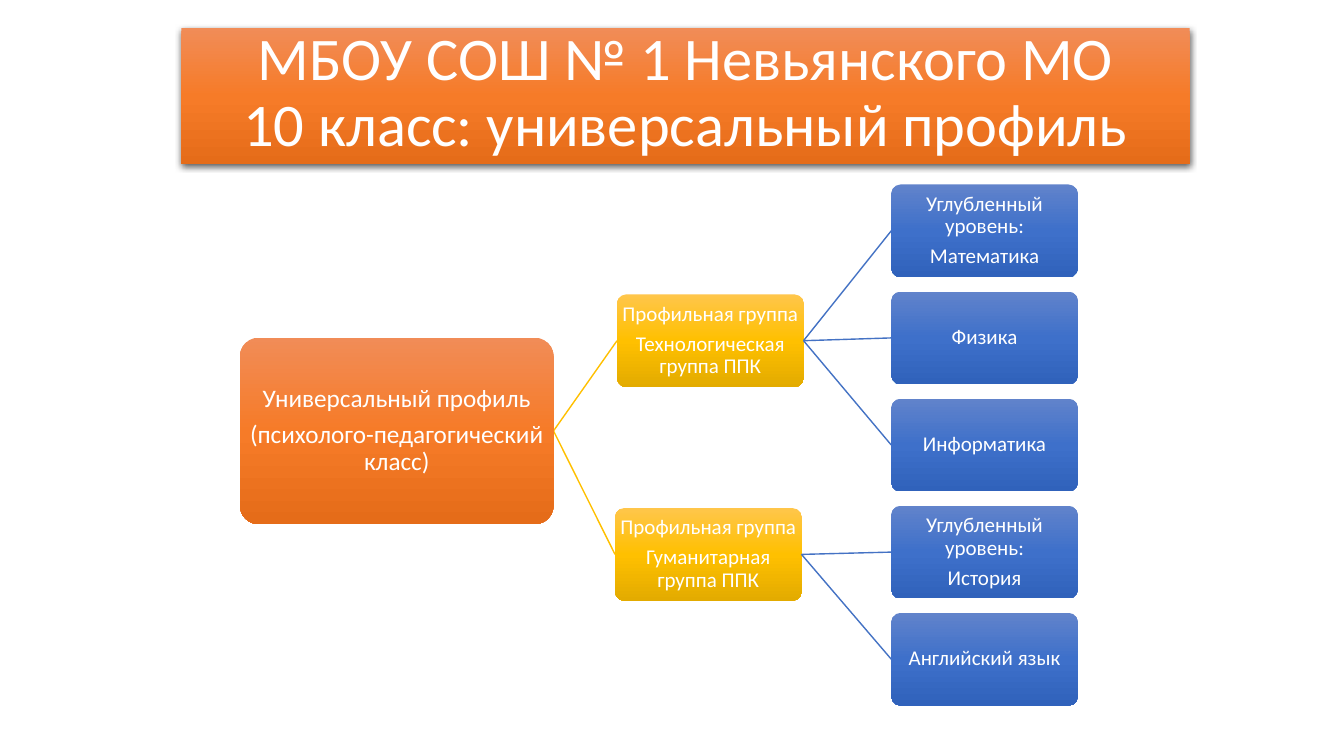
"""Build the slide with the tree of tenth-grade study profiles."""
from copy import deepcopy
from dataclasses import dataclass

from lxml.etree import SubElement
from pptx import Presentation
from pptx.dml.color import RGBColor
from pptx.enum.shapes import MSO_CONNECTOR as Connector, MSO_SHAPE as Preset
from pptx.enum.text import MSO_ANCHOR as Anchor, MSO_AUTO_SIZE as AutoSize, PP_ALIGN as Align
from pptx.oxml.ns import qn
from pptx.util import Inches, Pt

ORANGE = ("F18C57", "F67B28", "E56C19")
YELLOW = ("FFC64B", "FFC000", "E3AB00")
BLUE = ("6183CB", "3E70CA", "3062BB")
YELLOW_LINE, BLUE_LINE = "FFC000", "4472C4"
SUBJECT_LEFT, SUBJECT_TOP, SUBJECT_STEP = 8.84, 1.83, 1.0625


@dataclass(frozen=True)
class Node:
    """A box of the profile tree, measured in inches."""
    lines: tuple[str, ...]
    left: float
    top: float
    colors: tuple[str, str, str]
    width: float = 1.85
    height: float = 0.92
    size: float = 15

    @property
    def middle(self) -> float:
        return self.top + self.height / 2


def rgb(value: str) -> RGBColor:
    return RGBColor.from_string(value)


def fill_gradient(shape, colors: tuple[str, str, str]) -> None:
    shape.fill.gradient()
    shape.fill.gradient_angle = 270
    stop_list = shape._element.spPr.find(qn("a:gradFill")).find(qn("a:gsLst"))
    stop_list.insert(1, deepcopy(stop_list[0]))
    for stop, color, position in zip(shape.fill.gradient_stops, colors, (0, 0.5, 1)):
        stop.color.rgb = rgb(color)
        stop.position = position


def format_paragraph(paragraph, size: float, space_after: float = 0) -> None:
    layout = {"alignment": Align.CENTER, "line_spacing": 0.9,
              "space_before": Pt(0), "space_after": Pt(space_after)}
    for name, value in layout.items():
        setattr(paragraph, name, value)
    for name, value in {"name": "Calibri", "size": Pt(size), "bold": False}.items():
        setattr(paragraph.font, name, value)
    paragraph.font.color.rgb = rgb("FFFFFF")


def add_heading(slide, lines: tuple[str, str]) -> None:
    heading = slide.shapes.title
    place = {"left": 1.8, "top": 0.28, "width": 10, "height": 1.35}
    for name, value in place.items():
        setattr(heading, name, Inches(value))
    fill_gradient(heading, ORANGE)
    effects = SubElement(heading._element.spPr, qn("a:effectLst"))
    shadow = SubElement(effects, qn("a:outerShdw"), blurRad=str(Pt(4.5)),
                        dist=str(Pt(1.5)), dir="5400000", algn="ctr", rotWithShape="0")
    black = SubElement(shadow, qn("a:srgbClr"), val="000000")
    SubElement(black, qn("a:alpha"), val="63000")
    frame = heading.text_frame
    for name, value in {"vertical_anchor": Anchor.BOTTOM, "word_wrap": True,
                        "auto_size": AutoSize.NONE}.items():
        setattr(frame, name, value)
    school, grade = lines
    paragraph = frame.paragraphs[0]
    paragraph.add_run().text = school
    paragraph.add_line_break()
    paragraph.add_run().text = grade
    format_paragraph(paragraph, 43.2)


def add_node(slide, node: Node) -> None:
    box = slide.shapes.add_shape(
        Preset.ROUNDED_RECTANGLE,
        *map(Inches, (node.left, node.top, node.width, node.height)))
    box.adjustments[0] = 0.1
    box.shadow.inherit = False
    box.line.fill.background()
    fill_gradient(box, node.colors)
    frame = box.text_frame
    for side in ("left", "top", "right", "bottom"):
        setattr(frame, f"margin_{side}", Inches(0.01))
    frame.word_wrap = True
    frame.vertical_anchor = Anchor.MIDDLE
    frame.text = "\n".join(node.lines)
    for paragraph in frame.paragraphs:
        format_paragraph(paragraph, node.size, 0.35 * node.size)


def add_branch(slide, parent: Node, child: Node, color: str) -> None:
    ends = (parent.left + parent.width, parent.middle, child.left, child.middle)
    branch = slide.shapes.add_connector(Connector.STRAIGHT, *map(Inches, ends))
    branch.line.color.rgb = rgb(color)
    branch.line.width = Pt(1)
    SubElement(branch._element.spPr, qn("a:effectLst"))


def main() -> None:
    deck = Presentation()
    deck.slide_width, deck.slide_height = Inches(13.33), Inches(7.5)
    slide = deck.slides.add_slide(deck.slide_layouts[0])
    subtitle = slide.placeholders[1]._element
    subtitle.getparent().remove(subtitle)
    add_heading(slide, ("МБОУ СОШ № 1 Невьянского МО", "10 класс: универсальный профиль"))

    profile = Node(("Универсальный профиль", "(психолого-педагогический класс)"),
                   2.38, 3.35, ORANGE, 3.11, 1.85, 18)
    technology = Node(("Профильная группа", "Технологическая группа ППК"), 6.12, 2.92, YELLOW)
    humanities = Node(("Профильная группа", "Гуманитарная группа ППК"), 6.1, 5.04, YELLOW)
    advanced = "Углубленный уровень:"
    subjects = [
        (technology, (advanced, "Математика")),
        (technology, ("Физика",)),
        (technology, ("Информатика",)),
        (humanities, (advanced, "История")),
        (humanities, ("Английский язык",)),
    ]

    for group in (technology, humanities):
        add_branch(slide, profile, group, YELLOW_LINE)
        add_node(slide, group)
    add_node(slide, profile)
    for row, (group, lines) in enumerate(subjects):
        subject = Node(lines, SUBJECT_LEFT, SUBJECT_TOP + row * SUBJECT_STEP, BLUE)
        add_branch(slide, group, subject, BLUE_LINE)
        add_node(slide, subject)
    deck.save("out.pptx")


if __name__ == "__main__":
    main()
